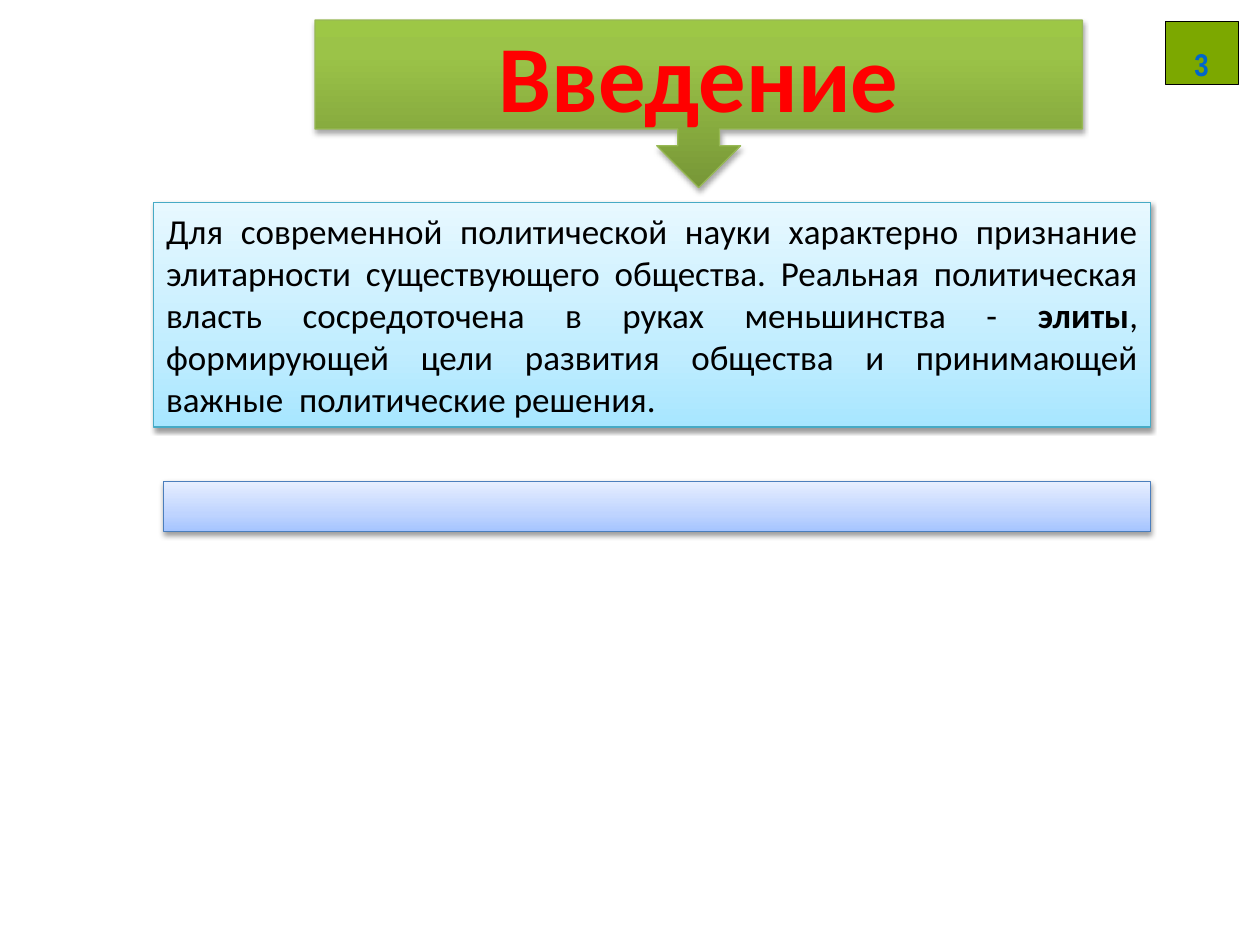
import pptx
import pptx.util
import pptx.dml.color
import pptx.enum.shapes
import pptx.enum.text
import pptx.oxml.ns
from lxml import etree

Inches = pptx.util.Inches
Pt = pptx.util.Pt
SHAPES = pptx.enum.shapes.MSO_SHAPE
ALIGN = pptx.enum.text.PP_ALIGN
ANCHOR = pptx.enum.text.MSO_ANCHOR
FIT = pptx.enum.text.MSO_AUTO_SIZE
qn = pptx.oxml.ns.qn

COLORS = {
    "black": "000000",
    "title": "FF0000",
    "title_line": "98B955",
    "body_line": "46AAC5",
    "bar_line": "4B7EBC",
    "badge": "7CA800",
    "number": "0066CC",
    "number_outline": "99CCFF",
}

# Gradient stops from bottom to top: percent and colour
GRADIENTS = {
    "title": [(0, "779737"), (80, "9BC348"), (100, "9DC746")],
    "body": [(0, "A7E6FF"), (35, "C1EDFF"), (100, "E7F8FF")],
    "bar": [(0, "A4C4FF"), (35, "BFD4FF"), (100, "E6EEFF")],
}


def rgb(name):
    return pptx.dml.color.RGBColor.from_string(COLORS[name])


def add_child(parent, tag, **attributes):
    values = {key: str(value) for key, value in attributes.items()}
    return etree.SubElement(parent, qn(tag), values)


def add_panel(page, kind, left, top, width, height, line):
    shape = page.shapes.add_shape(
        kind, Inches(left), Inches(top), Inches(width), Inches(height))
    shape.shadow.inherit = False
    shape.line.color.rgb = rgb(line)
    shape.line.width = Pt(0.75)
    return shape


def fill_gradient(shape, stops):
    shape.fill.gradient()
    shape.fill.gradient_angle = 90
    stop_list = shape._element.spPr.find(qn("a:gradFill")).find(qn("a:gsLst"))
    for old_stop in list(stop_list):
        stop_list.remove(old_stop)
    for percent, color in stops:
        stop = add_child(stop_list, "a:gs", pos=percent * 1000)
        add_child(stop, "a:srgbClr", val=color)


def add_shadow(shape, opacity, distance):
    effects = shape._element.spPr.find(qn("a:effectLst"))
    shadow = add_child(effects, "a:outerShdw", blurRad=Pt(3.1),
                       dist=Pt(distance), dir=90 * 60000, rotWithShape=0)
    color = add_child(shadow, "a:srgbClr", val=COLORS["black"])
    add_child(color, "a:alpha", val=opacity * 1000)


def add_span(para, text, size, color, bold=False, font="Calibri"):
    span = para.add_run()
    span.text = text
    span.font.name = font
    span.font.size = Pt(size)
    span.font.bold = bold
    span.font.color.rgb = rgb(color)
    return span


def outline_span(span, color, width):
    line = etree.Element(qn("a:ln"), {"w": str(Pt(width))})
    fill = add_child(line, "a:solidFill")
    add_child(fill, "a:srgbClr", val=COLORS[color])
    span.font._element.insert(0, line) if hasattr(span.font, "_element") \
        else span._r.get_or_add_rPr().insert(0, line)


def add_body(page):
    box = add_panel(page, SHAPES.RECTANGLE, 1.22, 1.61, 7.91, 1.78, "body_line")
    fill_gradient(box, GRADIENTS["body"])
    add_shadow(box, 38, 1.6)
    frame = box.text_frame
    frame.word_wrap = True
    frame.auto_size = FIT.SHAPE_TO_FIT_TEXT
    frame.vertical_anchor = ANCHOR.TOP
    para = frame.paragraphs[0]
    para.alignment = ALIGN.JUSTIFY
    add_span(para, "Для современной политической науки характерно признание "
                   "элитарности существующего общества. Реальная политическая "
                   "власть сосредоточена в руках меньшинства - ", 20, "black")
    add_span(para, "элиты", 20, "black", bold=True)
    add_span(para, ", формирующей цели развития общества и принимающей "
                   "важные  политические решения.", 20, "black")


def add_bar(page):
    bar = add_panel(page, SHAPES.RECTANGLE, 1.3, 3.82, 7.83, 0.4, "bar_line")
    fill_gradient(bar, GRADIENTS["bar"])
    add_shadow(bar, 38, 1.6)


def add_page_number(page):
    badge = add_panel(page, SHAPES.RECTANGLE, 9.25, 0.17, 0.58, 0.5, "black")
    badge.fill.solid()
    badge.fill.fore_color.rgb = rgb("badge")
    box = page.shapes.add_textbox(
        Inches(9.38), Inches(0.31), Inches(0.29), Inches(0.23))
    box.text_frame.word_wrap = False
    para = box.text_frame.paragraphs[0]
    para.alignment = ALIGN.CENTER
    span = add_span(para, "3", 18, "number", bold=True, font="Arial Narrow")
    outline_span(span, "number_outline", 1.5)


def add_title(page):
    callout = add_panel(page, SHAPES.DOWN_ARROW_CALLOUT,
                        2.5, 0.16, 6.09, 1.33, "title_line")
    fill_gradient(callout, GRADIENTS["title"])
    add_shadow(callout, 35, 1.8)
    callout.text_frame.word_wrap = True
    callout.text_frame.vertical_anchor = ANCHOR.MIDDLE
    para = callout.text_frame.paragraphs[0]
    para.alignment = ALIGN.CENTER
    add_span(para, "Введение", 54, "title", bold=True)


def main():
    deck = pptx.Presentation()
    deck.slide_width = Inches(10)
    deck.slide_height = Inches(7.5)
    page = deck.slides.add_slide(deck.slide_layouts[6])

    # Text panel and the empty bar below it
    add_body(page)
    add_bar(page)

    # Number in the corner
    add_page_number(page)

    # Heading whose arrow points at the text panel
    add_title(page)

    deck.save("out.pptx")


if __name__ == "__main__":
    main()
